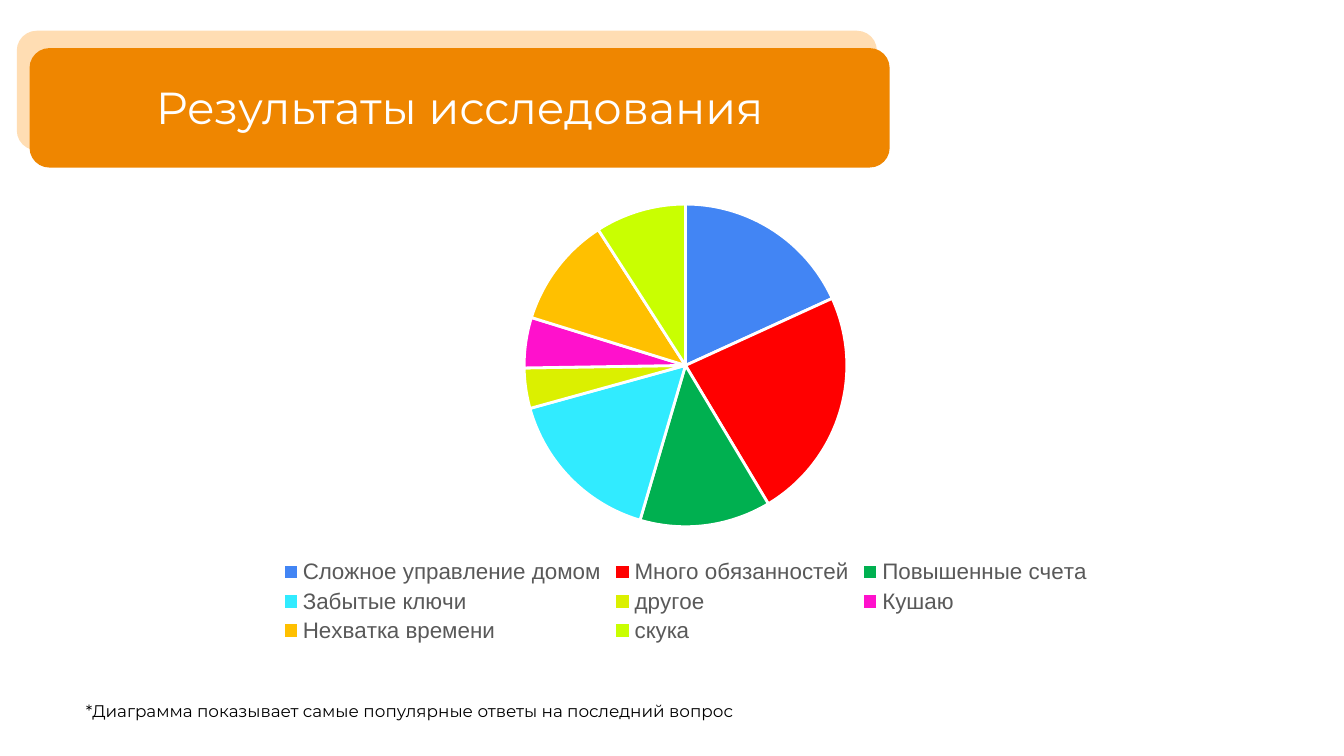
"""Build the survey results slide with a banner, a pie chart and a footnote."""
from dataclasses import dataclass

from pptx import Presentation, util as u
from pptx.chart.data import CategoryChartData
from pptx.dml.color import RGBColor
from pptx.enum import chart as ch, shapes, text
from pptx.slide import Slide

Pt = u.Pt


@dataclass(frozen=True)
class Theme:
    pale: str = "FFDDB3"
    deep: str = "EF8600"
    white: str = "FFFFFF"
    black: str = "000000"
    gray: str = "595959"
    head: str = "Montserrat"
    body: str = "Arial"
    title: int = 24
    key: int = 12
    plot: int = 10
    note: int = 9


@dataclass(frozen=True)
class Box:
    x: float
    y: float
    w: float
    h: float

    def pts(self) -> list[int]:
        return [Pt(v) for v in (self.x, self.y, self.w, self.h)]


@dataclass(frozen=True)
class Slice:
    name: str
    share: int
    color: str


@dataclass(frozen=True)
class Label:
    words: str
    box: Box
    size: int
    color: str
    align: text.PP_ALIGN
    inset: float
    wrap: bool


THEME = Theme()
CARDS = (
    (Box(9, 16.5, 460.8, 64), THEME.pale),
    (Box(15.84, 25.8, 460.8, 64), THEME.deep),
)
SLICES = (
    Slice("Сложное управление домом", 18, "4285F4"),
    Slice("Много обязанностей", 23, "FF0000"),
    Slice("Повышенные счета", 13, "00B050"),
    Slice("Забытые ключи", 16, "31EBFF"),
    Slice("другое", 4, "DBF000"),
    Slice("Кушаю", 5, "FF11CC"),
    Slice("Нехватка времени", 11, "FFC000"),
    Slice("скука", 9, "C9FF01"),
)
LABELS = (
    Label("Результаты исследования", Box(15.84, 34.8, 460.8, 44.6),
          THEME.title, THEME.white, text.PP_ALIGN.CENTER, 7.2, True),
    Label("*Диаграмма показывает самые популярные ответы на последний вопрос",
          Box(38.9, 371.5, 366.5, 18), THEME.note, THEME.black,
          text.PP_ALIGN.LEFT, 3.6, False),
)


def style(font, face: str, size: int, color: str) -> None:
    font.name, font.size = face, Pt(size)
    font.color.rgb = RGBColor.from_string(color)


def paint(fill, color: str) -> None:
    fill.solid()
    fill.fore_color.rgb = RGBColor.from_string(color)


def draw_card(page: Slide, box: Box, color: str) -> None:
    card = page.shapes.add_shape(shapes.MSO_SHAPE.ROUNDED_RECTANGLE, *box.pts())
    card.shadow.inherit = False
    card.line.fill.background()
    paint(card.fill, color)


def draw_label(page: Slide, item: Label) -> None:
    frame = page.shapes.add_textbox(*item.box.pts()).text_frame
    frame.word_wrap = item.wrap
    frame.vertical_anchor = text.MSO_ANCHOR.MIDDLE
    frame.margin_left = frame.margin_right = Pt(7.2)
    frame.margin_top = frame.margin_bottom = Pt(item.inset)
    if not item.wrap:
        frame.auto_size = text.MSO_AUTO_SIZE.SHAPE_TO_FIT_TEXT
    line = frame.paragraphs[0]
    line.alignment = item.align
    run = line.add_run()
    run.text = item.words
    style(run.font, THEME.head, item.size, item.color)


def draw_pie(page: Slide, box: Box, parts: tuple[Slice, ...]) -> None:
    data = CategoryChartData()
    data.categories = [part.name for part in parts]
    data.add_series("Series 1", [part.share for part in parts])
    pie = page.shapes.add_chart(ch.XL_CHART_TYPE.PIE, *box.pts(), data).chart
    style(pie.font, THEME.body, THEME.plot, THEME.black)
    pie.has_title = False
    pie.has_legend = True
    pie.legend.position = ch.XL_LEGEND_POSITION.BOTTOM
    pie.legend.include_in_layout = False
    style(pie.legend.font, THEME.body, THEME.key, THEME.gray)
    plot = pie.plots[0]
    plot.vary_by_categories = True
    for i, part in enumerate(parts):
        form = plot.series[0].points[i].format
        paint(form.fill, part.color)
        paint(form.line.fill, THEME.white)
        form.line.width = Pt(1.5)


def main() -> None:
    deck = Presentation()
    deck.slide_width, deck.slide_height = Pt(720), Pt(405)
    page = deck.slides.add_slide(deck.slide_layouts[6])
    for box, color in CARDS:
        draw_card(page, box, color)
    draw_pie(page, Box(95.8, 99.4, 542.9, 247.7), SLICES)
    for item in LABELS:
        draw_label(page, item)
    deck.save("out.pptx")


if __name__ == "__main__":
    main()
